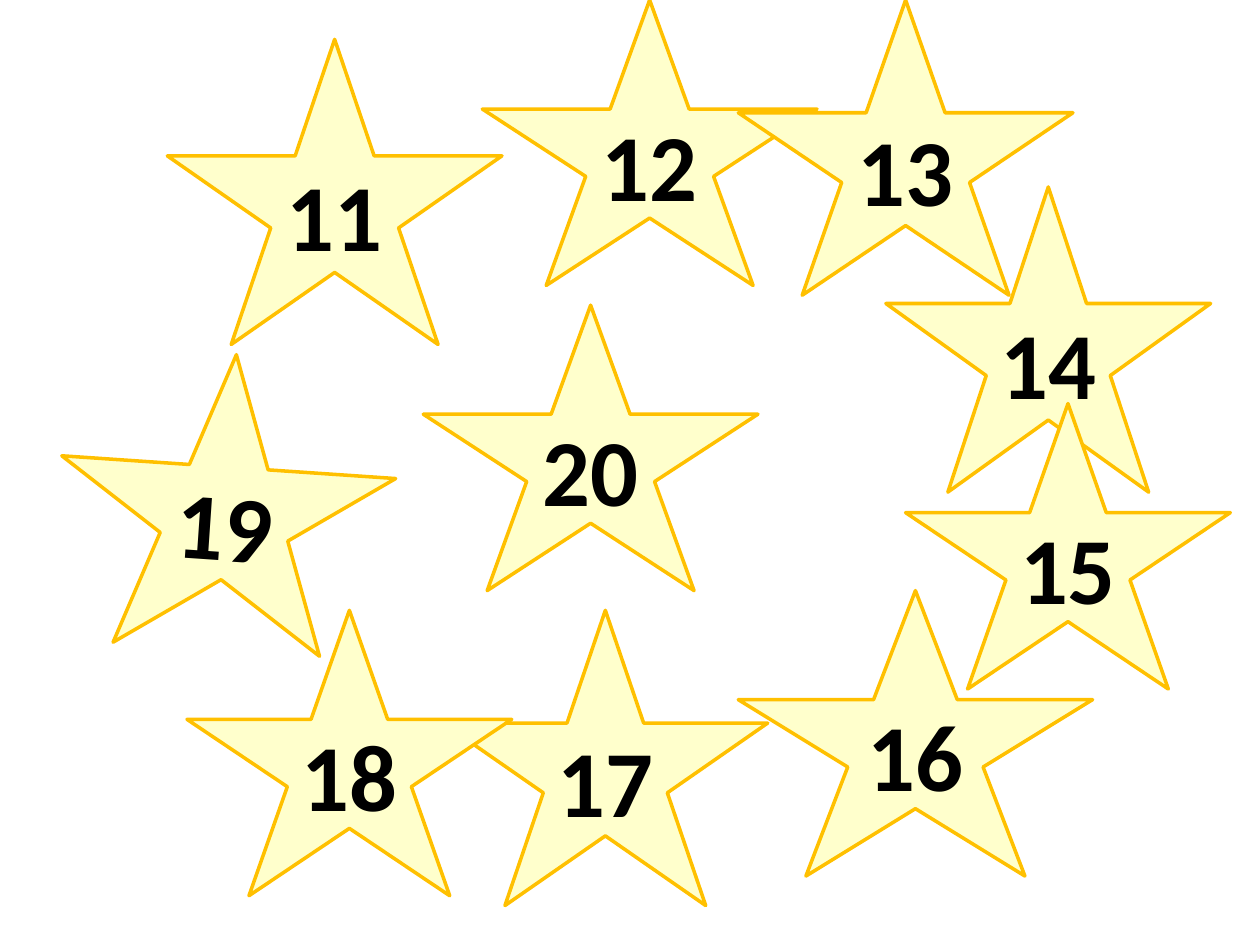
from pptx import Presentation
from pptx.dml.color import RGBColor
from pptx.enum.shapes import MSO_SHAPE
from pptx.enum.text import MSO_ANCHOR, PP_ALIGN
from pptx.util import Inches, Pt

STAR = MSO_SHAPE.STAR_5_POINT
MIDDLE = MSO_ANCHOR.MIDDLE
CENTER = PP_ALIGN.CENTER

PALE_YELLOW = RGBColor(0xFF, 0xFF, 0xCC)
GOLD = RGBColor(0xFF, 0xC0, 0x00)
BLACK = RGBColor(0x00, 0x00, 0x00)

SLIDE_WIDTH, SLIDE_HEIGHT = Inches(10), Inches(7.5)
COLUMNS, ROWS = 128, 96

# number, column, row, columns wide, rows high, rotation; from back to front
STARS = [
    (11, 17, 4, 34, 31, 0),
    (12, 49, 0, 34, 29, 0),
    (13, 75, 0, 34, 30, 0),
    (14, 90, 19, 33, 31, 0),
    (15, 92, 41, 33, 29, 0),
    (16, 75, 60, 36, 29, 0),
    (17, 45, 62, 33, 30, 0),
    (20, 43, 31, 34, 29, 0),
    (19, 6, 36, 34, 30, 3.9),
    (18, 19, 62, 33, 29, 0),
]


class StarSlide:
    """Holds the slide and the shared style; lengths are grid columns and rows."""

    font_name = "Calibri"
    font_size = Pt(54)
    line_width = Pt(2)

    def __init__(self, slide):
        self.slide = slide

    def add_star(self, number, column, row, width, height, rotation):
        column_width, row_height = SLIDE_WIDTH / COLUMNS, SLIDE_HEIGHT / ROWS
        shape = self.slide.shapes.add_shape(
            STAR,
            round(column * column_width), round(row * row_height),
            round(width * column_width), round(height * row_height),
        )
        shape.name = f"Star {number}"
        shape.rotation = rotation
        shape.shadow.inherit = False
        shape.fill.solid()
        shape.fill.fore_color.rgb = PALE_YELLOW
        shape.line.color.rgb = GOLD
        shape.line.width = self.line_width
        self.write_number(shape.text_frame, number)

    def write_number(self, text_frame, number):
        text_frame.word_wrap = True
        text_frame.vertical_anchor = MIDDLE
        paragraph = text_frame.paragraphs[0]
        paragraph.text = str(number)
        paragraph.alignment = CENTER
        font = paragraph.font
        font.name = self.font_name
        font.size = self.font_size
        font.bold = True
        font.color.rgb = BLACK


def main():
    presentation = Presentation()
    presentation.slide_width = SLIDE_WIDTH
    presentation.slide_height = SLIDE_HEIGHT
    blank_layout = presentation.slide_layouts[6]
    star_slide = StarSlide(presentation.slides.add_slide(blank_layout))
    for star in STARS:
        star_slide.add_star(*star)
    presentation.save("out.pptx")


if __name__ == "__main__":
    main()
